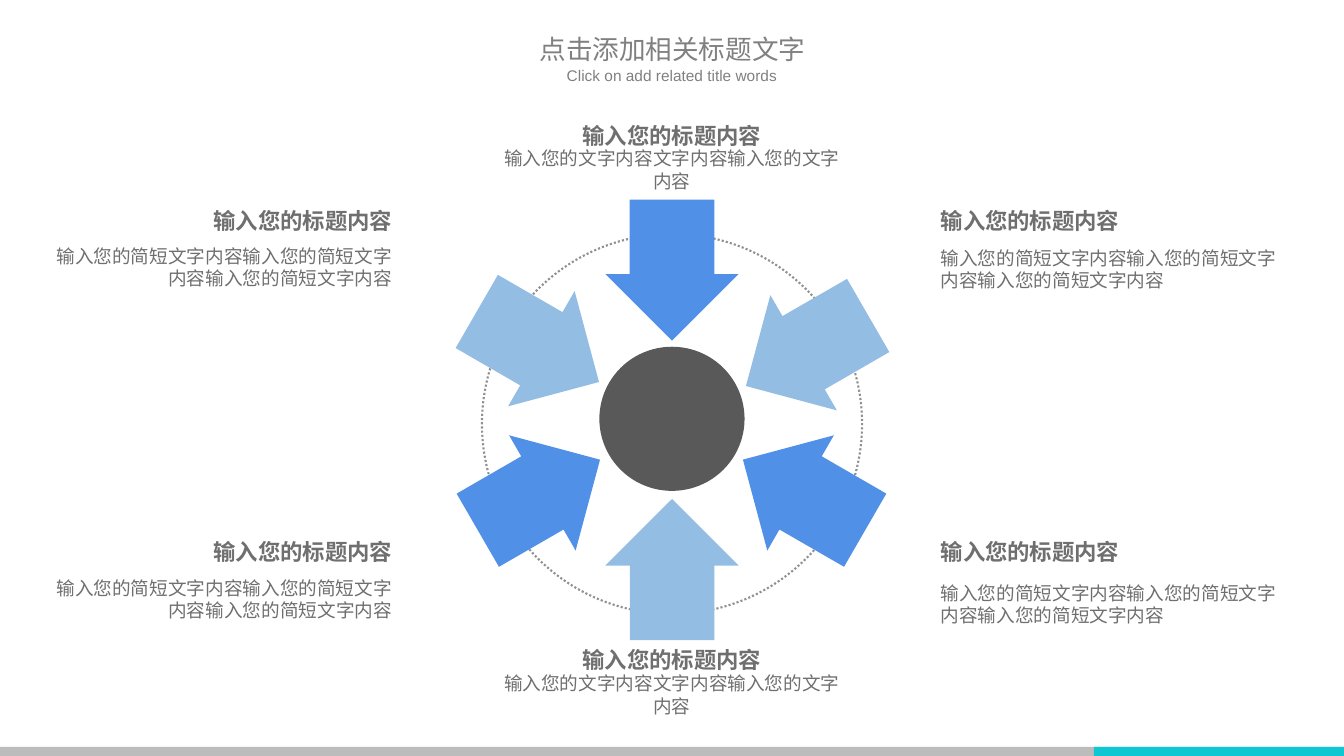
from dataclasses import dataclass

from lxml import etree
from pptx import Presentation
from pptx.dml.color import RGBColor
from pptx.enum import dml, shapes, text
from pptx.oxml import ns
from pptx.util import Inches, Pt


@dataclass(frozen=True)
class Theme:
    heading_ink: str = "808080"
    body_ink: str = "6F6F6F"
    blue: str = "5190E7"
    pale_blue: str = "94BDE3"
    hub: str = "595959"
    ring: str = "909090"
    bar: str = "BCBCBC"
    bar_accent: str = "0FC7D3"
    chinese: str = "Noto Sans CJK SC"
    latin: str = "Arial"
    title_size: float = 19
    subtitle_size: float = 11
    label_size: float = 16
    body_size: float = 13.3


THEME = Theme()
WIDTH, HEIGHT = 13.33, 7.5
LABEL = "输入您的标题内容"
CENTRED_BODY = "输入您的文字内容文字内容输入您的文字内容"
SIDE_BODY = "输入您的简短文字内容" * 3
LEFT, CENTRE, RIGHT = text.PP_ALIGN.LEFT, text.PP_ALIGN.CENTER, text.PP_ALIGN.RIGHT

# Clockwise from the top: arrow centres as offsets from the wheel's centre.
ARROW_OFFSETS = [(0, -1.49), (1.34, -0.69), (1.31, 0.74),
                 (0, 1.48), (-1.32, 0.74), (-1.33, -0.73)]

# Box left, label top, body top, alignment, body text.
CAPTIONS = [
    (5.0, 1.21, 1.46, CENTRE, CENTRED_BODY),
    (5.0, 6.41, 6.67, CENTRE, CENTRED_BODY),
    (0.56, 5.34, 5.72, RIGHT, SIDE_BODY),
    (9.33, 2.05, 2.45, LEFT, SIDE_BODY),
    (0.56, 2.05, 2.43, RIGHT, SIDE_BODY),
    (9.33, 5.34, 5.77, LEFT, SIDE_BODY),
]


def inches(*lengths):
    return [Inches(length) for length in lengths]


def add_filled(page, kind, box, color):
    shape = page.shapes.add_shape(kind, *inches(*box))
    shape.shadow.inherit = False
    shape.fill.solid()
    shape.fill.fore_color.rgb = RGBColor.from_string(color)
    shape.line.fill.background()
    return shape


def write(frame, words, size, color, font, align, bold=False):
    """Put one formatted paragraph in the frame, in Latin and East Asian type."""
    para = frame.paragraphs[0]
    para.alignment = align
    span = para.add_run()
    span.text = words
    for face in (para.font, span.font):
        face.size, face.bold, face.name = Pt(size), bold, font
        face.color.rgb = RGBColor.from_string(color)
    east_asian = etree.SubElement(span.font._element, ns.qn("a:ea"))
    east_asian.set("typeface", font)


def add_heading(page, left, top):
    title = page.shapes.title
    title.left, title.top, title.width, title.height = inches(left, top, 3.18, 0.39)
    subtitle = page.shapes.add_textbox(*inches(left + 0.38, top + 0.33, 2.41, 0.39))
    for box in (title, subtitle):
        box.text_frame.word_wrap = True
        box.text_frame.auto_size = text.MSO_AUTO_SIZE.NONE
        box.text_frame.vertical_anchor = text.MSO_ANCHOR.TOP
    write(title.text_frame, "点击添加相关标题文字", THEME.title_size,
          THEME.heading_ink, THEME.chinese, CENTRE)
    write(subtitle.text_frame, "Click on add related title words", THEME.subtitle_size,
          THEME.heading_ink, THEME.latin, CENTRE)


def add_wheel(page, center_x, center_y):
    """Draw the dotted ring, the hub and six arrows pointing at the hub."""
    diameter = 3.77
    ring = page.shapes.add_shape(
        shapes.MSO_SHAPE.ARC,
        *inches(center_x - diameter / 2, center_y - 1.85, diameter, diameter))
    ring.adjustments[0], ring.adjustments[1] = 97.2, 97.11
    ring.rotation = 180
    ring.shadow.inherit = False
    ring.fill.background()
    ring.line.color.rgb = RGBColor.from_string(THEME.ring)
    ring.line.width = Pt(1.5)
    ring.line.dash_style = dml.MSO_LINE.ROUND_DOT

    add_filled(page, shapes.MSO_SHAPE.OVAL,
               (center_x - 0.72, center_y - 0.73, 1.44, 1.43), THEME.hub)

    width, height = 1.32, 1.4
    for index, (dx, dy) in enumerate(ARROW_OFFSETS):
        box = (center_x + dx - width / 2, center_y + dy - height / 2, width, height)
        color = THEME.pale_blue if index % 2 else THEME.blue
        arrow = add_filled(page, shapes.MSO_SHAPE.DOWN_ARROW, box, color)
        arrow.adjustments[0], arrow.adjustments[1] = 0.635, 0.5
        arrow.rotation = 60 * index


def add_fitted_text(page, box, wrap, anchor, *style):
    frame = page.shapes.add_textbox(*inches(*box)).text_frame
    frame.margin_left = frame.margin_right = frame.margin_top = frame.margin_bottom = 0
    frame.word_wrap = wrap
    frame.auto_size = text.MSO_AUTO_SIZE.SHAPE_TO_FIT_TEXT
    frame.vertical_anchor = anchor
    write(frame, *style)


def add_caption(page, left, label_top, body_top, align, body):
    width, label_width = 3.33, 1.81
    slack = {LEFT: 0, CENTRE: 0.5, RIGHT: 1}[align] * (width - label_width)
    add_fitted_text(page, (left, body_top, width, 0.45), True, text.MSO_ANCHOR.TOP,
                    body, THEME.body_size, THEME.body_ink, THEME.chinese, align)
    add_fitted_text(page, (left + slack, label_top, label_width, 0.27), False,
                    text.MSO_ANCHOR.MIDDLE, LABEL, THEME.label_size,
                    THEME.body_ink, THEME.chinese, align, True)


def add_footer_bar(page, top):
    accent_left = 10.85
    for left, color in ((0, THEME.bar), (accent_left, THEME.bar_accent)):
        add_filled(page, shapes.MSO_SHAPE.RECTANGLE,
                   (left, top, WIDTH - left, HEIGHT - top), color)


def main():
    deck = Presentation()
    deck.slide_width, deck.slide_height = inches(WIDTH, HEIGHT)
    page = deck.slides.add_slide(deck.slide_layouts.get_by_name("Title Only"))
    add_footer_bar(page, 7.41)
    add_wheel(page, WIDTH / 2, 4.17)
    for caption in CAPTIONS:
        add_caption(page, *caption)
    add_heading(page, 5.08, 0.28)
    deck.save("out.pptx")


if __name__ == "__main__":
    main()
